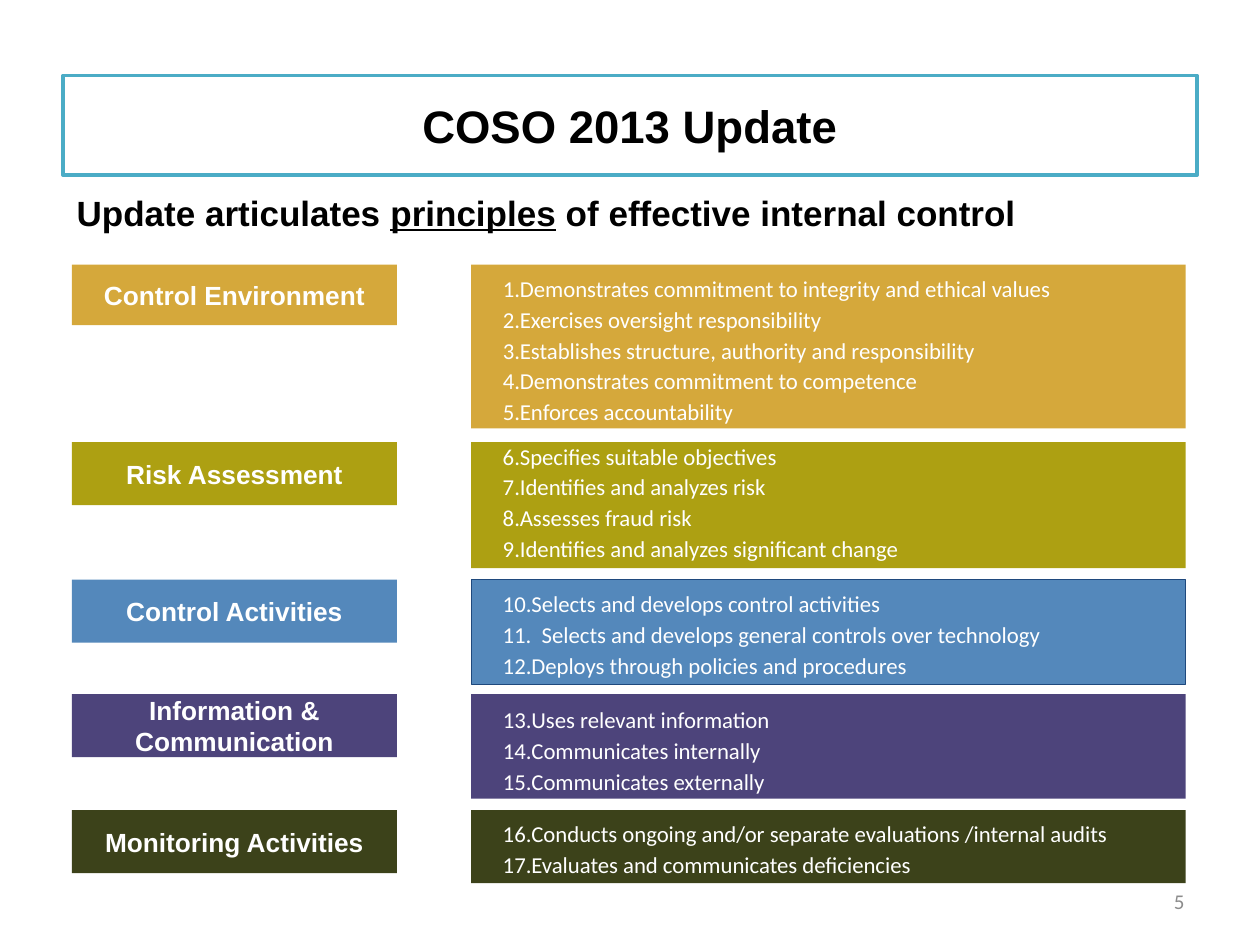
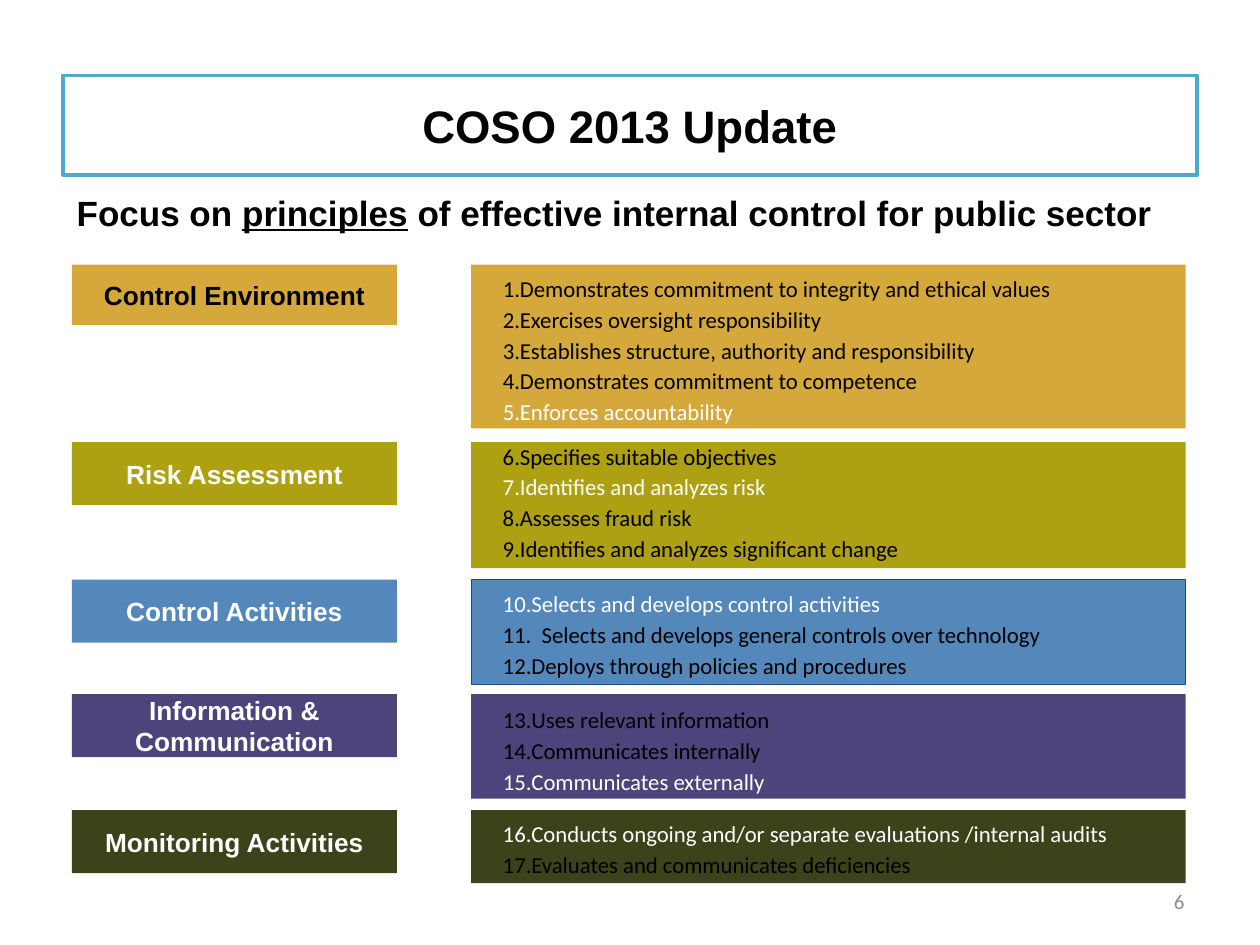
from dataclasses import dataclass

from lxml.etree import SubElement
from pptx import Presentation
from pptx.dml.color import RGBColor as RGB
from pptx.enum.shapes import MSO_SHAPE as Shape
from pptx.enum.text import MSO_ANCHOR as Anchor, PP_ALIGN as Align
from pptx.oxml.ns import qn
from pptx.util import Inches, Pt

WHITE = RGB(0xFF, 0xFF, 0xFF)
BLACK = RGB(0x00, 0x00, 0x00)
GRAY = RGB(0x8C, 0x8C, 0x8C)
TEAL = RGB(0x4B, 0xAC, 0xC6)
NAVY = RGB(0x1F, 0x49, 0x7D)
GOLD = RGB(0xD5, 0xA8, 0x3B)
OLIVE = RGB(0xAD, 0xA0, 0x12)
BLUE = RGB(0x54, 0x88, 0xBB)
PURPLE = RGB(0x4D, 0x44, 0x7B)
MOSS = RGB(0x3C, 0x42, 0x1A)

HEAD, BODY = "Arial", "Calibri"
LABEL_X, LABEL_W = 0.57, 2.58
PANEL_X, PANEL_W = 3.74, 5.67
LIST_X = 3.99
TYPED = 11  # this number is part of the text, not automatic


@dataclass
class Part:
    """One control component: its label, its panel and its principles."""
    label: str
    fill: RGB
    top: float
    tall: float
    first: int
    items: list
    size: tuple  # width and height of the list
    drop: float = 0.08  # from panel top to list top
    label_h: float = 0.5
    edge: RGB = None


PARTS = [
    Part("Control Environment", GOLD, 2.1, 1.3, 1, [
        "Demonstrates commitment to integrity and ethical values",
        "Exercises oversight responsibility",
        "Establishes structure, authority and responsibility",
        "Demonstrates commitment to competence",
        "Enforces accountability",
    ], (5.42, 1.33), label_h=0.48),
    Part("Risk Assessment", OLIVE, 3.51, 1, 6, [
        "Specifies suitable objectives",
        "Identifies and analyzes risk",
        "Assesses fraud risk",
        "Identifies and analyzes significant change",
    ], (5.54, 1.08), drop=0),
    Part("Control Activities", BLUE, 4.6, 0.83, 10, [
        "Selects and develops control activities",
        "11.  Selects and develops general controls over technology",
        "Deploys through policies and procedures",
    ], (5.33, 0.45), edge=NAVY),
    Part("Information & Communication", PURPLE, 5.51, 0.83, 13, [
        "Uses relevant information",
        "Communicates internally",
        "Communicates externally",
    ], (5.08, 0.71), drop=0.09),
    Part("Monitoring Activities", MOSS, 6.43, 0.58, 16, [
        "Conducts ongoing and/or separate evaluations /internal audits",
        "Evaluates and communicates deficiencies",
    ], (5.5, 0.3)),
]


def style(run, size, color, face=HEAD, bold=False):
    font = run.font
    font.name, font.size, font.bold = face, Pt(size), bold
    font.color.rgb = color


def pad(frame, x, y):
    frame.margin_left = frame.margin_right = Inches(x)
    frame.margin_top = frame.margin_bottom = Inches(y)


def number(para, start):
    """Hang the paragraph and, if start is given, number it from there."""
    props = para._p.get_or_add_pPr()
    props.set("marL", "0")
    props.set("indent", str(-Inches(0.3)))
    if start is None:
        SubElement(props, qn("a:buNone"))
    else:
        SubElement(props, qn("a:buFont"), typeface="+mj-lt")
        SubElement(props, qn("a:buAutoNum"), type="arabicPeriod",
                   startAt=str(start))


class Deck:
    def __init__(self):
        self.prs = Presentation()
        self.prs.slide_width, self.prs.slide_height = Inches(10), Inches(7.5)
        self.slide = None

    def start(self, title):
        self.slide = self.prs.slides.add_slide(self.prs.slide_layouts[5])
        box = self.slide.shapes.title
        box.left, box.top = Inches(0.5), Inches(0.6)
        box.width, box.height = Inches(9), Inches(0.79)
        box.fill.solid()
        box.fill.fore_color.rgb = WHITE
        box.line.color.rgb, box.line.width = TEAL, Pt(2)
        frame = box.text_frame
        frame.text, frame.vertical_anchor = title, Anchor.MIDDLE
        para = frame.paragraphs[0]
        para.alignment = Align.CENTER
        style(para.runs[0], 26, BLACK, bold=True)

    def text(self, x, y, w, h):
        box = self.slide.shapes.add_textbox(
            Inches(x), Inches(y), Inches(w), Inches(h))
        box.text_frame.word_wrap = True
        return box.text_frame

    def rect(self, x, y, w, h, fill, edge=None):
        box = self.slide.shapes.add_shape(
            Shape.RECTANGLE, Inches(x), Inches(y), Inches(w), Inches(h))
        box.shadow.inherit = False
        box.fill.solid()
        box.fill.fore_color.rgb = fill
        if edge:
            box.line.color.rgb, box.line.width = edge, Pt(0.5)
        else:
            box.line.fill.background()
        return box

    def lead(self, before, after):
        """Subtitle with the key word underlined."""
        para = self.text(0.51, 1.47, 8.98, 0.44).paragraphs[0]
        for words in (before, "principles", after):
            run = para.add_run()
            run.text = words
            style(run, 20, BLACK, bold=True)
            run.font.underline = words == "principles"

    def label(self, part, color):
        box = self.rect(LABEL_X, part.top, LABEL_W, part.label_h, part.fill)
        frame = box.text_frame
        frame.text, frame.word_wrap = part.label, True
        frame.vertical_anchor = Anchor.MIDDLE
        pad(frame, 0.05, 0.03)
        para = frame.paragraphs[0]
        para.alignment, para.space_after = Align.CENTER, Pt(2)
        style(para.runs[0], 15, color, bold=True)

    def panel(self, part, dark):
        self.rect(PANEL_X, part.top, PANEL_W, part.tall, part.fill, part.edge)
        frame = self.text(LIST_X, part.top + part.drop, *part.size)
        pad(frame, 0, 0)
        frame.text = "\n".join(part.items)
        start = part.first
        for num, para in enumerate(frame.paragraphs, part.first):
            para.space_after = Pt(2)
            if num == TYPED:
                number(para, None)
                start = num + 1
            else:
                number(para, start)
            style(para.runs[0], 13, BLACK if num in dark else WHITE, BODY)

    def page(self, num):
        frame = self.text(7.17, 6.95, 2.33, 0.4)
        frame.text, frame.vertical_anchor = str(num), Anchor.MIDDLE
        para = frame.paragraphs[0]
        para.alignment = Align.RIGHT
        style(para.runs[0], 12, GRAY, BODY)

    def build(self, num, before, after, dark=(), marked=()):
        """Add a slide; dark numbers and marked labels are set in black."""
        self.start("COSO 2013 Update")
        for part in PARTS:
            self.panel(part, dark)
            self.label(part, BLACK if part.label in marked else WHITE)
        self.lead(before, after)
        self.page(num)


def main():
    deck = Deck()
    deck.build(5, "Update articulates ", " of effective internal control")
    deck.build(6, "Focus on ",
               " of effective internal control for public sector",
               dark={1, 2, 3, 4, 6, 8, 9, 11, 12, 13, 14, 17},
               marked={"Control Environment"})
    deck.prs.save("out.pptx")


if __name__ == "__main__":
    main()
